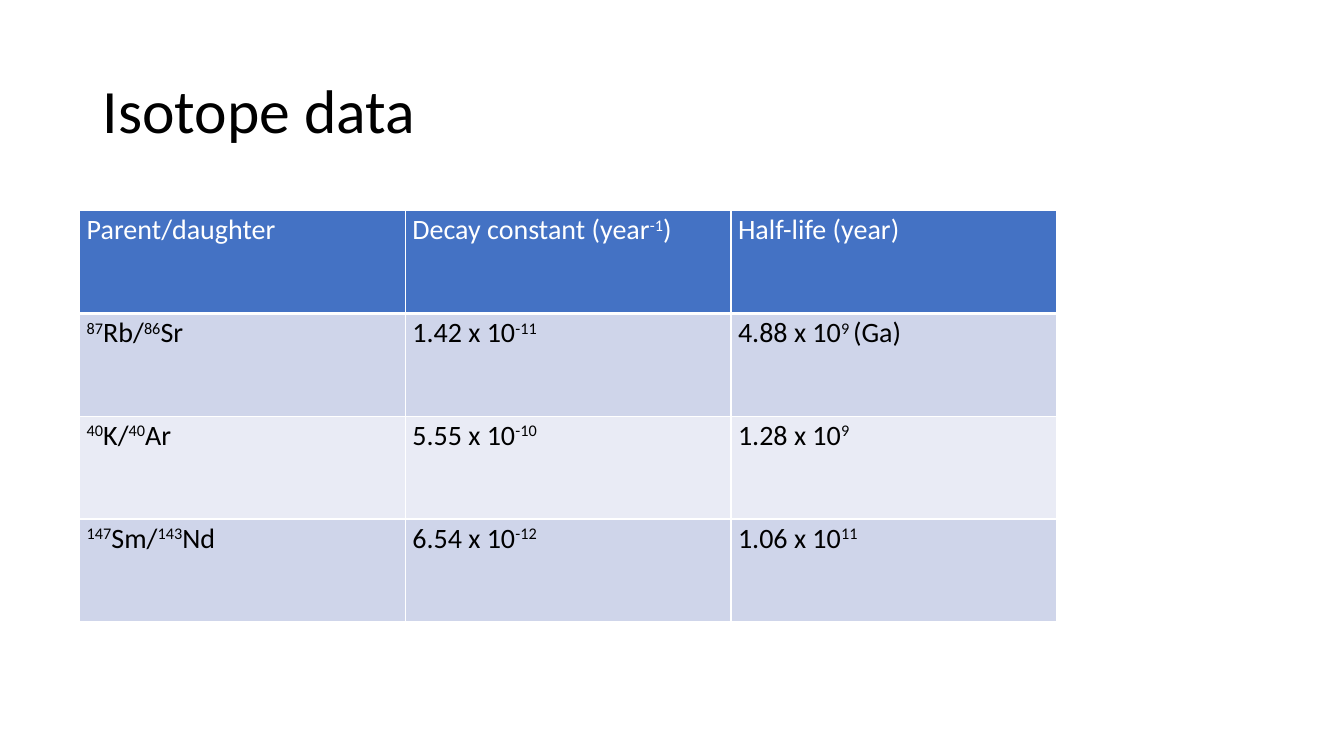
from lxml.etree import SubElement
from pptx import Presentation
from pptx.dml.color import RGBColor
from pptx.enum.text import MSO_ANCHOR, MSO_AUTO_SIZE, PP_ALIGN
from pptx.oxml.ns import qn
from pptx.util import Emu, Pt

EMU_PER_PX = 9144
FONT_NAME = "Calibri"
WHITE = RGBColor(0xFF, 0xFF, 0xFF)
BLACK = RGBColor(0x00, 0x00, 0x00)
HEADER_BLUE = RGBColor(0x44, 0x72, 0xC4)
BAND_DARK = RGBColor(0xCF, 0xD5, 0xEA)
BAND_LIGHT = RGBColor(0xE9, 0xEB, 0xF5)

SUPERSCRIPT_MARK = "^"
ISOTOPE_ROWS = [
    ["Parent/daughter", "Decay constant (year^-1^)", "Half-life (year)"],
    ["^87^Rb/^86^Sr", "1.42 x 10^-11^", "4.88 x 10^9 ^(Ga)"],
    ["^40^K/^40^Ar", "5.55 x 10^-10^", "1.28 x 10^9^"],
    ["^147^Sm/^143^Nd", "6.54 x 10^-12^", "1.06 x 10^11^"],
]


def px(length):
    return Emu(length * EMU_PER_PX)


def set_attributes(target, values):
    for name, value in values.items():
        setattr(target, name, value)


def format_font(font, size, color):
    set_attributes(font, {"name": FONT_NAME, "size": Pt(size), "bold": False})
    font.color.rgb = color


def add_title(slide, text):
    title = slide.shapes.title
    set_attributes(title, {"left": px(92), "top": px(40), "width": px(1150), "height": px(145)})
    frame = title.text_frame
    frame.text = text
    set_attributes(frame, {
        "word_wrap": True,
        "auto_size": MSO_AUTO_SIZE.NONE,
        "vertical_anchor": MSO_ANCHOR.MIDDLE,
    })
    paragraph = frame.paragraphs[0]
    set_attributes(paragraph, {"alignment": PP_ALIGN.LEFT, "line_spacing": 0.9})
    format_font(paragraph.runs[0].font, 44, BLACK)


def write_cell(cell, text, color):
    set_attributes(cell, {
        "margin_left": px(7), "margin_right": px(7),
        "margin_top": px(0), "margin_bottom": px(0),
        "vertical_anchor": MSO_ANCHOR.TOP,
    })
    paragraph = cell.text_frame.paragraphs[0]
    set_attributes(paragraph, {"alignment": PP_ALIGN.LEFT, "line_spacing": 1.07})
    for index, part in enumerate(text.split(SUPERSCRIPT_MARK)):
        if not part:
            continue
        run = paragraph.add_run()
        run.text = part
        format_font(run.font, 20, color)
        if index % 2:
            run._r.get_or_add_rPr().set("baseline", "30000")


def add_borders(cell, bottom_width):
    properties = cell._tc.get_or_add_tcPr()
    widths = {"lnL": 1, "lnR": 1, "lnT": 1, "lnB": bottom_width}
    for side, width in widths.items():
        line = SubElement(properties, qn(f"a:{side}"), w=str(Pt(width)))
        fill = SubElement(line, qn("a:solidFill"))
        SubElement(fill, qn("a:srgbClr"), val=str(WHITE))


def fill_cell(cell, color):
    cell.fill.solid()
    cell.fill.fore_color.rgb = color


def add_isotope_table(slide, rows):
    row_count, column_count = len(rows), len(rows[0])
    table = slide.shapes.add_table(
        row_count, column_count, px(79), px(209),
        px(323 * column_count), px(102 * row_count),
    ).table
    for row_index, texts in enumerate(rows):
        is_header = row_index == 0
        band = BAND_DARK if row_index % 2 else BAND_LIGHT
        for column_index, text in enumerate(texts):
            cell = table.cell(row_index, column_index)
            write_cell(cell, text, WHITE if is_header else BLACK)
            add_borders(cell, 3 if is_header else 1)
            fill_cell(cell, HEADER_BLUE if is_header else band)


def main():
    presentation = Presentation()
    set_attributes(presentation, {"slide_width": px(1333), "slide_height": px(750)})
    slide = presentation.slides.add_slide(presentation.slide_layouts[5])
    add_title(slide, "Isotope data")
    add_isotope_table(slide, ISOTOPE_ROWS)
    presentation.save("out.pptx")


if __name__ == "__main__":
    main()
